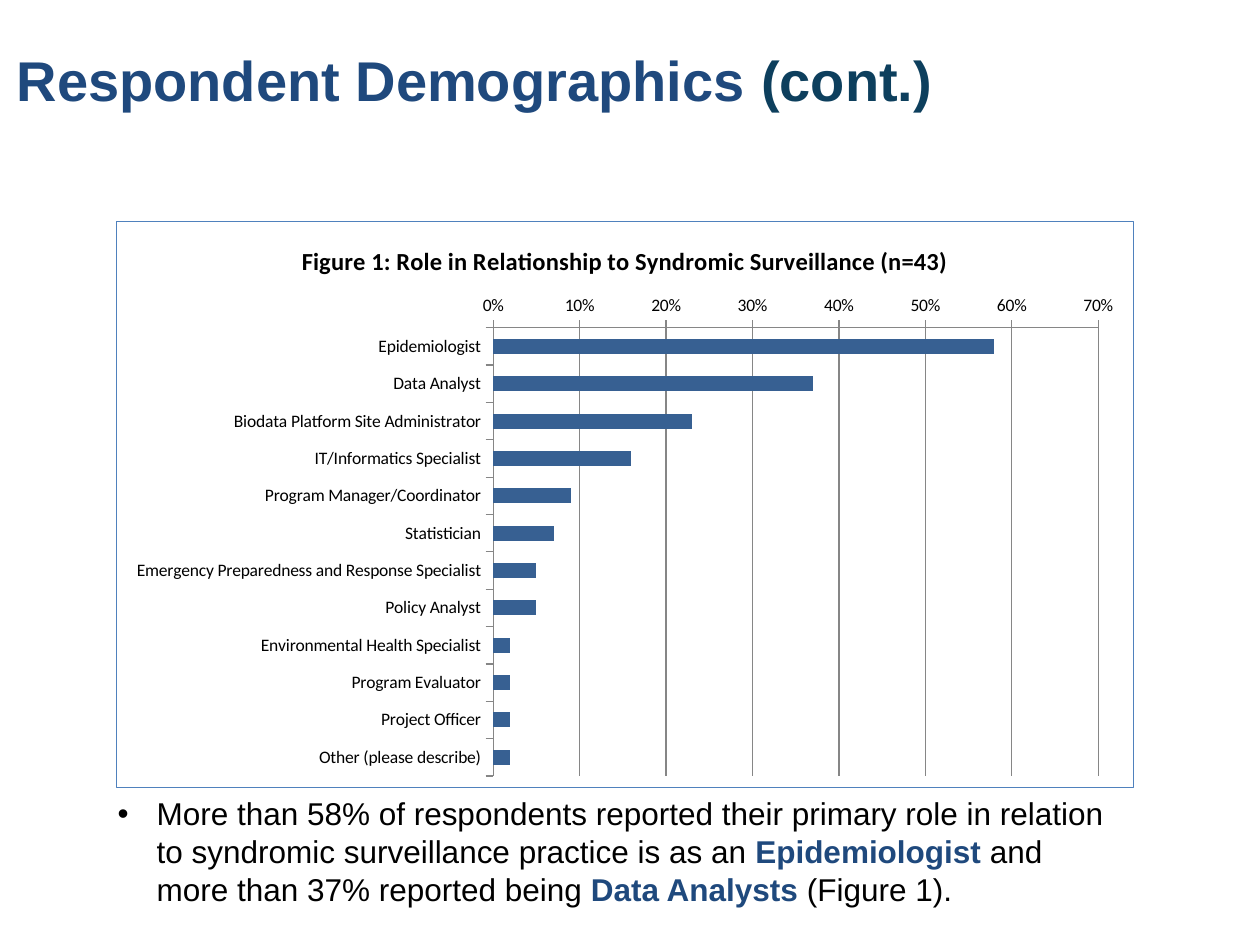
from lxml import etree
from pptx import Presentation
from pptx.chart.data import CategoryChartData
from pptx.dml.color import RGBColor
from pptx.enum.chart import XL_CHART_TYPE, XL_TICK_MARK
from pptx.enum.text import MSO_ANCHOR, MSO_AUTO_SIZE, PP_ALIGN
from pptx.oxml import parse_xml
from pptx.oxml.ns import nsdecls, qn
from pptx.util import Pt

BAR = XL_CHART_TYPE.BAR_CLUSTERED
OUTSIDE = XL_TICK_MARK.OUTSIDE
MIDDLE, TOP = MSO_ANCHOR.MIDDLE, MSO_ANCHOR.TOP
NO_AUTOFIT = MSO_AUTO_SIZE.NONE
LEFT = PP_ALIGN.LEFT

EMU_PER_PX = 914400 / 126
COLORS = {
    "navy": "1F497D",
    "teal": "0D3F5D",
    "black": "000000",
    "bar": "376092",
    "grid": "868686",
    "border": "4F81BD",
}
ROLES = {
    "Epidemiologist": 0.58,
    "Data Analyst": 0.37,
    "Biodata Platform Site Administrator": 0.23,
    "IT/Informatics Specialist": 0.16,
    "Program Manager/Coordinator": 0.09,
    "Statistician": 0.07,
    "Emergency Preparedness and Response Specialist": 0.05,
    "Policy Analyst": 0.05,
    "Environmental Health Specialist": 0.02,
    "Program Evaluator": 0.02,
    "Project Officer": 0.02,
    "Other (please describe)": 0.02,
}


def px(*lengths):
    """Turn pixel lengths into a list of EMU."""
    return [round(length * EMU_PER_PX) for length in lengths]


def write_spans(para, spans, size):
    """Add (text, colour name, bold) spans to a paragraph."""
    for text, color, bold in spans:
        span = para.add_run()
        span.text = text
        for name, value in {"name": "Arial", "size": Pt(size), "bold": bold}.items():
            setattr(span.font, name, value)
        span.font.color.rgb = RGBColor.from_string(COLORS[color])


deck = Presentation()
deck.slide_width, deck.slide_height = px(1260, 945)
page = deck.slides.add_slide(deck.slide_layouts[1])
title, body = page.placeholders

# Title and bullet
for box, frame, anchor in [
    (title, (4, 0, 951, 158), MIDDLE),
    (body, (105, 788, 1029, 127), TOP),
]:
    box.left, box.top, box.width, box.height = px(*frame)
    box.text_frame.auto_size = NO_AUTOFIT
    box.text_frame.vertical_anchor = anchor

heading = title.text_frame.paragraphs[0]
heading.alignment = LEFT
write_spans(heading, [
    ("Respondent Demographics ", "navy", True),
    ("(cont.)", "teal", True),
], 32)

finding = body.text_frame.paragraphs[0]
finding.space_before = Pt(0)
indent = px(39)[0]
properties = finding._p.get_or_add_pPr()
properties.set("marL", str(indent))
properties.set("indent", str(-indent))
etree.SubElement(properties, qn("a:buFont"), typeface="Arial")
etree.SubElement(properties, qn("a:buChar"), char="•")
write_spans(finding, [
    ("More than 58% of respondents reported their primary role in relation "
     "to syndromic surveillance practice is as an ", "black", False),
    ("Epidemiologist", "navy", True),
    (" and more than 37% reported being ", "black", False),
    ("Data Analysts ", "navy", True),
    ("(Figure 1).", "black", False),
], 18)

# Chart
data = CategoryChartData(number_format="0%")
data.categories = list(ROLES)
data.add_series("Series 1", list(ROLES.values()))
chart = page.shapes.add_chart(BAR, *px(116, 221, 1018, 567), data).chart
chart.has_legend = False
chart.has_title = True
caption = chart.chart_title.text_frame
caption.text = "Figure 1: Role in Relationship to Syndromic Surveillance (n=43)"

for font, size, bold in [
    (chart.font, 10, False),
    (caption.paragraphs[0].runs[0].font, 14, True),
]:
    for name, value in {"name": "Calibri", "size": Pt(size), "bold": bold}.items():
        setattr(font, name, value)
    font.color.rgb = RGBColor.from_string(COLORS["black"])

plot = chart.plots[0]
plot.gap_width = 150
plot.vary_by_categories = False
fill = plot.series[0].format.fill
fill.solid()
fill.fore_color.rgb = RGBColor.from_string(COLORS["bar"])

role_axis, share_axis = chart.category_axis, chart.value_axis
role_axis.reverse_order = True
for name, value in {
    "minimum_scale": 0,
    "maximum_scale": 0.7,
    "major_unit": 0.1,
    "has_major_gridlines": True,
}.items():
    setattr(share_axis, name, value)
share_axis.tick_labels.number_format = "0%"
share_axis.tick_labels.number_format_is_linked = False

for axis in (role_axis, share_axis):
    axis.major_tick_mark = OUTSIDE
for part in (role_axis, share_axis, share_axis.major_gridlines):
    part.format.line.width = Pt(0.75)
    part.format.line.color.rgb = RGBColor.from_string(COLORS["grid"])

border = parse_xml(
    f'<c:spPr {nsdecls("c", "a")}><a:noFill/><a:ln w="{Pt(0.75)}"><a:solidFill>'
    f'<a:srgbClr val="{COLORS["border"]}"/></a:solidFill></a:ln></c:spPr>'
)
chart.element.find(qn("c:chart")).addnext(border)

deck.save("out.pptx")
